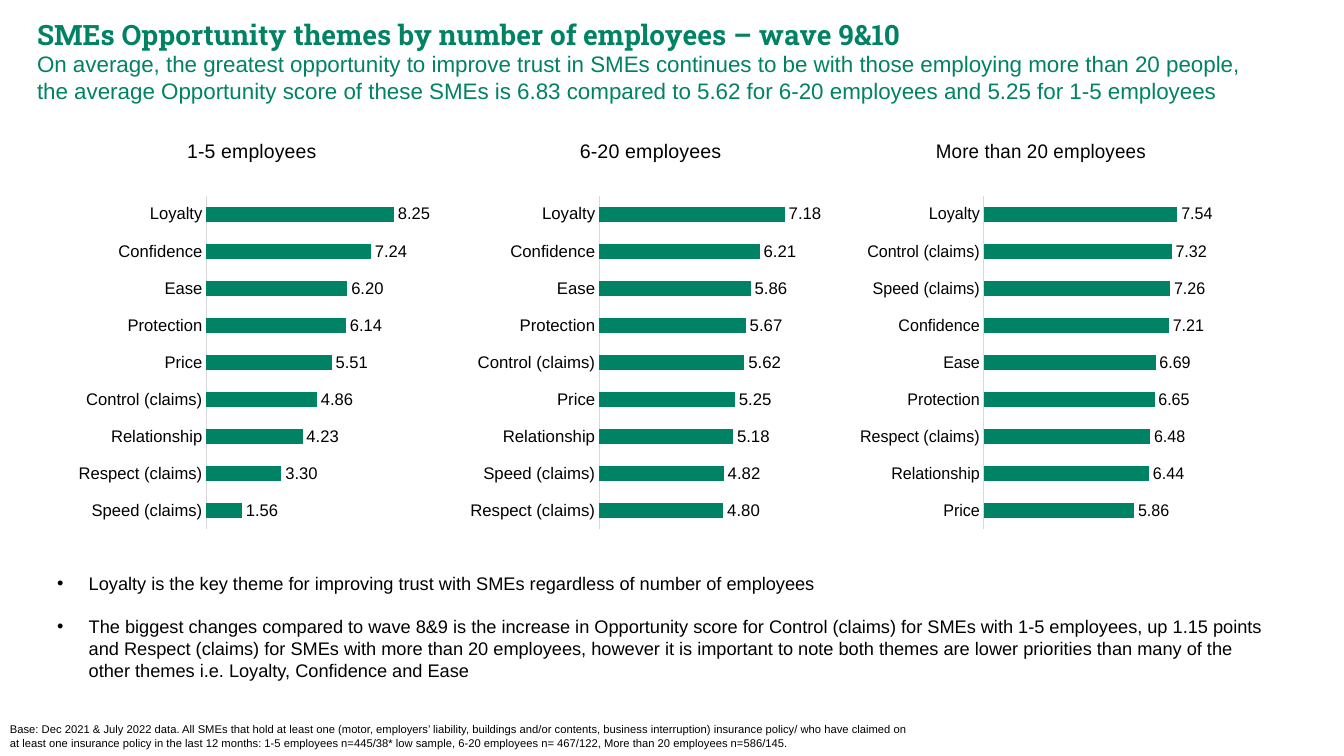
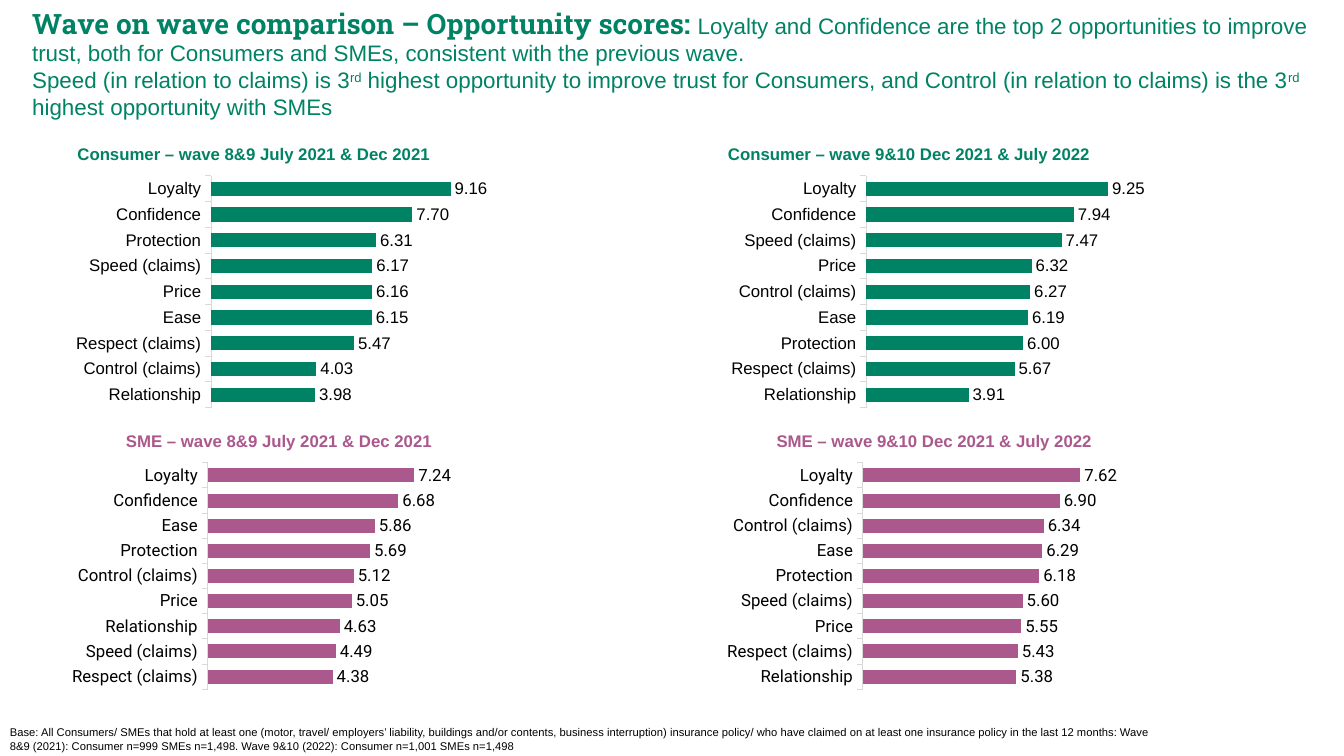
"""Build two slides that compare opportunity scores by theme."""
from lxml import etree
from pptx import Presentation
from pptx import util as u
from pptx.chart import data as chartdata
from pptx.dml import color
from pptx.enum import chart as kinds
from pptx.oxml import ns

GREEN, PURPLE, BLACK, GREY = "008265", "AB588C", "000000", "D9D9D9"
BODY, HEADING, SME_FONT = "Arial", "Roboto Slab", "Roboto"
LOYALTY, CONFIDENCE, EASE, PROTECTION = "Loyalty", "Confidence", "Ease", "Protection"
PRICE, RELATIONSHIP = "Price", "Relationship"
CONTROL, RESPECT, SPEED = "Control (claims)", "Respect (claims)", "Speed (claims)"


def rgb(value):
    return color.RGBColor.from_string(value)


def style(font, size=12, name=BODY, ink=BLACK, bold=False):
    font.size = u.Pt(size)
    font.name = name
    font.bold = bold
    font.color.rgb = rgb(ink)


def write(para, content, raised=False, **look):
    span = para.add_run()
    span.text = content
    style(span.font, **look)
    if raised:
        span._r.get_or_add_rPr().set("baseline", "30000")


def arrange(parent, index, inner=False, **spots):
    layout = parent.find(ns.qn("c:layout"))
    if layout is None:
        layout = etree.Element(ns.qn("c:layout"))
        parent.insert(index, layout)
    manual = etree.SubElement(layout, ns.qn("c:manualLayout"))
    settings = {"layoutTarget": "inner"} if inner else {}
    settings.update(xMode="edge", yMode="edge", **spots)
    for tag, value in settings.items():
        etree.SubElement(manual, ns.qn("c:" + tag)).set("val", str(value))


class Report:
    def __init__(self):
        self.deck = Presentation()
        self.deck.slide_width, self.deck.slide_height = u.Pt(960), u.Pt(540)
        self.page = None

    def new_page(self):
        self.page = self.deck.slides.add_slide(self.deck.slide_layouts[6])

    def text_box(self, left, top, width, height, inset=True):
        box = self.page.shapes.add_textbox(*map(u.Pt, (left, top, width, height)))
        frame = box.text_frame
        frame.word_wrap = True
        if not inset:
            frame.margin_left = frame.margin_right = 0
            frame.margin_top = frame.margin_bottom = 0
        return frame

    def headline(self, frame, title):
        write(frame.paragraphs[0], title, size=20, name=HEADING, ink=GREEN, bold=True)

    def subtitle(self, para, *parts):
        for part in parts:
            write(para, part, raised=part == "rd", size=16, ink=GREEN)

    def footnote(self, content, top, width):
        frame = self.text_box(0, top, width, 540 - top)
        write(frame.paragraphs[0], content, size=8)

    def bullets(self, items, *place):
        frame = self.text_box(*place)
        for number, item in enumerate(items):
            para = frame.add_paragraph() if number else frame.paragraphs[0]
            if number:
                para.space_before = u.Pt(15)
            props = para._p.get_or_add_pPr()
            props.set("marL", str(u.Pt(22.5)))
            props.set("indent", str(-u.Pt(22.5)))
            etree.SubElement(props, ns.qn("a:buFont")).set("typeface", BODY)
            etree.SubElement(props, ns.qn("a:buChar")).set("char", "•")
            write(para, item, size=13)

    def bar_chart(self, place, title, scores, plot, top_score, gap, fill=GREEN,
                  font=BODY, ticks=True, title_look=None, title_spot=None):
        data = chartdata.CategoryChartData(number_format="0.00")
        data.categories = list(scores)
        data.add_series("Series 1", list(scores.values()))
        chart = self.page.shapes.add_chart(
            kinds.XL_CHART_TYPE.BAR_CLUSTERED, *map(u.Pt, place), data).chart
        style(chart.font, name=font)
        chart.has_legend = False
        chart.has_title = True
        write(chart.chart_title.text_frame.paragraphs[0], title, **(title_look or {}))
        chart.chart_title.include_in_layout = False
        if title_spot:
            arrange(chart.chart_title._element, 1, x=title_spot[0], y=title_spot[1])

        bars = chart.plots[0]
        bars.gap_width = gap
        bars.vary_by_categories = False
        bars.series[0].format.fill.solid()
        bars.series[0].format.fill.fore_color.rgb = rgb(fill)
        bars.has_data_labels = True
        labels = bars.data_labels
        labels.show_value = True
        labels.position = kinds.XL_LABEL_POSITION.OUTSIDE_END
        labels.number_format, labels.number_format_is_linked = "0.00", False
        style(labels.font, name=font)
        arrange(bars._element.getparent(), 0, inner=True, **dict(zip("xywh", plot)))

        themes, values = chart.category_axis, chart.value_axis
        themes.reverse_order = True
        marks = kinds.XL_TICK_MARK
        themes.major_tick_mark = marks.OUTSIDE if ticks else marks.NONE
        themes.format.line.color.rgb = rgb(GREY)
        themes.format.line.width = u.Pt(0.75)
        style(themes.tick_labels.font, name=font)
        values.visible = False
        values.has_major_gridlines = False
        values.minimum_scale, values.maximum_scale = 0, top_score


def employees_page(report):
    report.new_page()
    report.footnote(
        "Base: Dec 2021 & July 2022 data. All SMEs that hold at least one (motor, employers’ "
        "liability, buildings and/or contents, business interruption) insurance policy/ who have "
        "claimed on at least one insurance policy in the last 12 months: 1-5 employees n=445/38* "
        "low sample, 6-20 employees n= 467/122, More than 20 employees n=586/145.", 512.6, 664.6)
    frame = report.text_box(19.4, 8.6, 884, 99)
    report.headline(frame, "SMEs Opportunity themes by number of employees – wave 9&10")
    report.subtitle(
        frame.add_paragraph(),
        "On average, the greatest opportunity to improve trust in SMEs continues to be with those "
        "employing more than 20 people, the average Opportunity score of these SMEs is 6.83 "
        "compared to 5.62 for 6-20 employees and 5.25 for 1-5 employees")
    groups = [
        ("1-5 employees", 0.36, 0.54, 9, {
            LOYALTY: 8.25, CONFIDENCE: 7.24, EASE: 6.2, PROTECTION: 6.14, PRICE: 5.51,
            CONTROL: 4.86, RELATIONSHIP: 4.23, RESPECT: 3.3, SPEED: 1.56}),
        ("6-20 employees", 0.36, 0.54, 8, {
            LOYALTY: 7.18, CONFIDENCE: 6.21, EASE: 5.86, PROTECTION: 5.67, CONTROL: 5.62,
            PRICE: 5.25, RELATIONSHIP: 5.18, SPEED: 4.82, RESPECT: 4.8}),
        ("More than 20 employees", 0.28, 0.56, 8, {
            LOYALTY: 7.54, CONTROL: 7.32, SPEED: 7.26, CONFIDENCE: 7.21, EASE: 6.69,
            PROTECTION: 6.65, RESPECT: 6.48, RELATIONSHIP: 6.44, PRICE: 5.86}),
    ]
    for column, (title, title_left, plot_width, top_score, scores) in enumerate(groups):
        report.bar_chart(
            (33.8 + 279.4 * column, 72.7, 273.6, 335.5), title, scores,
            (0.42, 0.2, plot_width, 0.71), top_score, 150, ticks=False,
            title_look={"size": 14}, title_spot=(title_left, 0.07))
    report.bullets([
        "Loyalty is the key theme for improving trust with SMEs regardless of number of employees",
        "The biggest changes compared to wave 8&9 is the increase in Opportunity score for Control "
        "(claims) for SMEs with 1-5 employees, up 1.15 points and Respect (claims) for SMEs with "
        "more than 20 employees, however it is important to note both themes are lower priorities "
        "than many of the other themes i.e. Loyalty, Confidence and Ease",
    ], 33.8, 405.4, 879, 85.7)


def waves_page(report):
    report.new_page()
    frame = report.text_box(23, 4.3, 914.4, 77, inset=False)
    report.headline(frame, "Wave on wave comparison – Opportunity scores: ")
    report.subtitle(
        frame.paragraphs[0],
        "Loyalty and Confidence are the top 2 opportunities to improve trust, both for Consumers "
        "and SMEs, consistent with the previous wave.")
    report.subtitle(
        frame.add_paragraph(),
        "Speed (in relation to claims) is 3", "rd",
        " highest opportunity to improve trust for Consumers, and Control (in relation to claims) "
        "is the 3", "rd", " highest opportunity with SMEs")
    report.footnote(
        "Base: All Consumers/ SMEs that hold at least one (motor, travel/ employers’ liability, "
        "buildings and/or contents, business interruption) insurance policy/ who have claimed on "
        "at least one insurance policy in the last 12 months: Wave 8&9 (2021): Consumer n=999 "
        "SMEs n=1,498. Wave 9&10 (2022): Consumer n=1,001 SMEs n=1,498", 514.8, 830.9)
    waves = ["wave 8&9 July 2021 & Dec 2021", "wave 9&10 Dec 2021 & July 2022"]
    audiences = [
        ("Consumer", GREEN, BODY, 11.5, 92.2, 209.5, (0.41, 0.16, 0.55, 0.79), [
            {LOYALTY: 9.16, CONFIDENCE: 7.7, PROTECTION: 6.31, SPEED: 6.17, PRICE: 6.16,
             EASE: 6.15, RESPECT: 5.47, CONTROL: 4.03, RELATIONSHIP: 3.98},
            {LOYALTY: 9.25, CONFIDENCE: 7.94, SPEED: 7.47, PRICE: 6.32, CONTROL: 6.27,
             EASE: 6.19, PROTECTION: 6, RESPECT: 5.67, RELATIONSHIP: 3.91}]),
        ("SME", PURPLE, SME_FONT, 29.5, 297.4, 207.4, (0.35, 0.16, 0.6, 0.78), [
            {LOYALTY: 7.24, CONFIDENCE: 6.68, EASE: 5.86, PROTECTION: 5.69, CONTROL: 5.12,
             PRICE: 5.05, RELATIONSHIP: 4.63, SPEED: 4.49, RESPECT: 4.38},
            {LOYALTY: 7.62, CONFIDENCE: 6.9, CONTROL: 6.34, EASE: 6.29, PROTECTION: 6.18,
             SPEED: 5.6, PRICE: 5.55, RESPECT: 5.43, RELATIONSHIP: 5.38}]),
    ]
    for audience, ink, font, left, top, height, plot, results in audiences:
        for column, (wave, scores) in enumerate(zip(waves, results)):
            report.bar_chart(
                (left + 468 * column, top, 339.8, height), f"{audience} – {wave}", scores,
                plot, 10, 80, fill=ink, font=font, title_look={"ink": ink, "bold": True})


def main():
    report = Report()
    employees_page(report)
    waves_page(report)
    report.deck.save("out.pptx")


if __name__ == "__main__":
    main()
